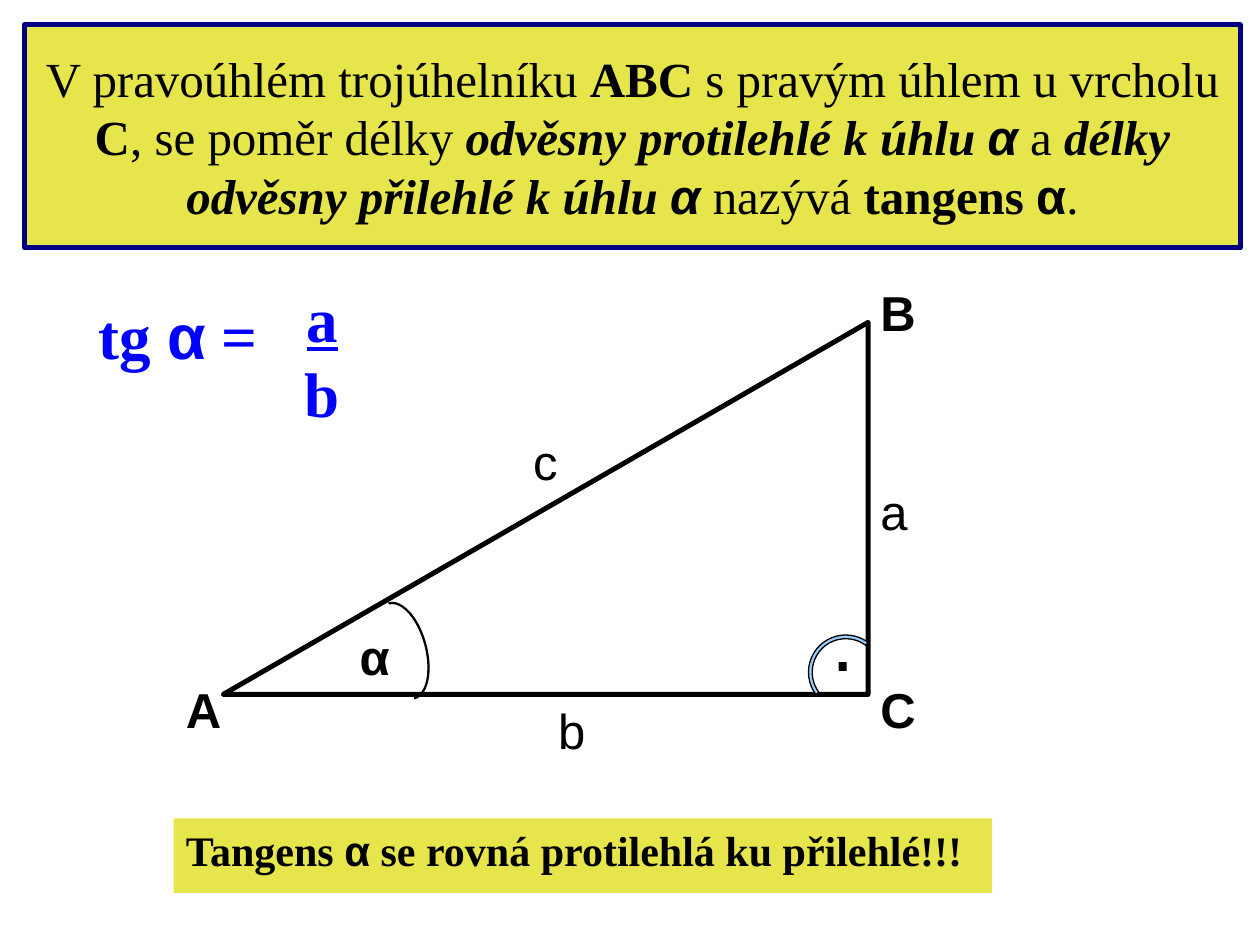
import itertools

import pptx
import pptx.dml.color
import pptx.enum.shapes
import pptx.enum.text
import pptx.oxml.ns
import pptx.util
from lxml import etree

Cm = pptx.util.Cm
Pt = pptx.util.Pt
RGBColor = pptx.dml.color.RGBColor
MSO_SHAPE = pptx.enum.shapes.MSO_SHAPE
MSO_ANCHOR = pptx.enum.text.MSO_ANCHOR
PP_ALIGN = pptx.enum.text.PP_ALIGN

BLACK = RGBColor(0x00, 0x00, 0x00)
BLUE = RGBColor(0x00, 0x00, 0xFF)
NAVY = RGBColor(0x00, 0x00, 0x80)
YELLOW = RGBColor(0xE6, 0xE6, 0x4C)
PALE_BLUE = RGBColor(0x99, 0xCC, 0xFF)

SERIF = "Times New Roman"
SANS = "Arial"


def write(paragraph, text, *, size=28, color=BLACK, font=SERIF,
          bold=False, italic=False, underline=False):
    """Append text to the paragraph; the Greek letter is always sans serif."""
    for is_alpha, letters in itertools.groupby(text, lambda ch: ch == "α"):
        run = paragraph.add_run()
        run.text = "".join(letters)
        run.font.name = SANS if is_alpha else font
        run.font.size = Pt(size)
        run.font.color.rgb = color
        run.font.bold = bold
        run.font.italic = italic
        run.font.underline = underline


def set_frame(shape, *, margins=(0.25, 0.13), anchor=MSO_ANCHOR.TOP,
              align=PP_ALIGN.LEFT, wrap=True):
    frame = shape.text_frame
    frame.word_wrap = wrap
    frame.vertical_anchor = anchor
    frame.margin_left = frame.margin_right = Cm(margins[0])
    frame.margin_top = frame.margin_bottom = Cm(margins[1])
    frame.paragraphs[0].alignment = align
    return frame


def add_text_box(slide, left, top, width, height, **layout):
    box = slide.shapes.add_textbox(Cm(left), Cm(top), Cm(width), Cm(height))
    return set_frame(box, **layout)


def style(shape, *, fill=None, line=None, line_width=2.83):
    shape.shadow.inherit = False
    if fill is None:
        shape.fill.background()
    else:
        shape.fill.solid()
        shape.fill.fore_color.rgb = fill
    if line is None:
        shape.line.fill.background()
    else:
        shape.line.color.rgb = line
        shape.line.width = Pt(line_width)
        outline = shape.line._get_or_add_ln()
        etree.SubElement(outline, pptx.oxml.ns.qn("a:round"))


def add_panel(slide, left, top, width, height, *, line=None, **layout):
    panel = slide.shapes.add_shape(
        MSO_SHAPE.RECTANGLE, Cm(left), Cm(top), Cm(width), Cm(height))
    style(panel, fill=YELLOW, line=line)
    return set_frame(panel, **layout)


def add_definition(slide, left, top, width, height):
    frame = add_panel(slide, left, top, width, height, line=NAVY,
                      margins=(0.3, 0.18), anchor=MSO_ANCHOR.MIDDLE,
                      align=PP_ALIGN.CENTER)
    plain, strong, term = {}, {"bold": True}, {"bold": True, "italic": True}
    for text, look in [
        ("V pravoúhlém trojúhelníku ", plain),
        ("ABC", strong),
        (" s pravým úhlem u vrcholu ", plain),
        ("C", strong),
        (", se poměr délky ", plain),
        ("odvěsny protilehlé k úhlu α", term),
        (" a ", plain),
        ("délky odvěsny přilehlé k úhlu α", term),
        (" nazývá ", plain),
        ("tangens α", strong),
        (".", plain),
    ]:
        write(frame.paragraphs[0], text, **look)


def add_formula(slide, left, top):
    look = {"size": 36, "color": BLUE, "bold": True}
    tangent = add_text_box(slide, left, top, 4.5, 2.5, margins=(0.3, 0.18),
                           anchor=MSO_ANCHOR.MIDDLE, align=PP_ALIGN.CENTER)
    write(tangent.paragraphs[0], "tg α = ", **look)

    fraction = add_text_box(slide, left + 3.5, top, 3, 3,
                            align=PP_ALIGN.CENTER)
    write(fraction.paragraphs[0], "a", underline=True, **look)
    denominator = fraction.add_paragraph()
    denominator.alignment = PP_ALIGN.CENTER
    write(denominator, "b", **look)


def add_angle_arc(slide, left, top, width, height, *, rotation, start, end,
                  thickness):
    """Draw a thin arc from start to end, in degrees before rotation."""
    arc = slide.shapes.add_shape(
        MSO_SHAPE.BLOCK_ARC, Cm(left), Cm(top), Cm(width), Cm(height))
    arc.rotation = rotation
    # Angles are stored in 1/60000 degree, adjustments scale by 100000.
    arc.adjustments[0] = start * 0.6
    arc.adjustments[1] = end * 0.6
    arc.adjustments[2] = thickness
    style(arc, fill=PALE_BLUE, line=BLACK, line_width=0.75)


def add_triangle(slide, left, top, width, height):
    right, bottom = left + width, top + height
    builder = slide.shapes.build_freeform(Cm(left), Cm(bottom))
    builder.add_line_segments(
        [(Cm(right), Cm(bottom)), (Cm(right), Cm(top))], close=True)
    style(builder.convert_to_shape(), line=BLACK)

    add_angle_arc(slide, right - 1.2, bottom - 1.2, 1.5, 1.5, rotation=315,
                  start=188.3, end=351.7, thickness=0.05)
    add_angle_arc(slide, left + 2.6, bottom - 1.38, 2, 1, rotation=75,
                  start=180, end=0, thickness=0.02)

    for name, x, y in [("A", left - 1, bottom - 0.44),
                       ("C", right, bottom - 0.44),
                       ("B", right, top - 0.94),
                       ("α", left + 2.5, bottom - 1.5)]:
        corner = add_text_box(slide, x, y, 1.5, 1.45)
        write(corner.paragraphs[0], name, font=SANS, bold=True)

    for name, x, y in [("c", left + 6, top + 2.06),
                       ("a", right, top + 3.08),
                       ("b", left + 6.5, bottom)]:
        side = add_text_box(slide, x, y, 1.03, 1.45, wrap=False)
        write(side.paragraphs[0], name, font=SANS)

    right_angle = add_text_box(slide, right - 0.99, bottom - 2.29, 0.97, 2.29,
                               wrap=False)
    write(right_angle.paragraphs[0], ".", size=48, font=SANS)


def add_mnemonic(slide, left, top, width, height):
    frame = add_panel(slide, left, top, width, height)
    write(frame.paragraphs[0], "Tangens α se rovná protilehlá ku přilehlé!!!",
          size=24, bold=True)


def main():
    deck = pptx.Presentation()
    deck.slide_width, deck.slide_height = Cm(25.4), Cm(19.05)
    slide = deck.slides.add_slide(deck.slide_layouts[6])
    add_formula(slide, 1.5, 5.5)
    add_triangle(slide, 4.5, 6.5, 13, 7.5)
    add_definition(slide, 0.5, 0.5, 24.5, 4.5)
    add_mnemonic(slide, 3.5, 16.5, 16.5, 1.5)
    deck.save("out.pptx")


if __name__ == "__main__":
    main()
